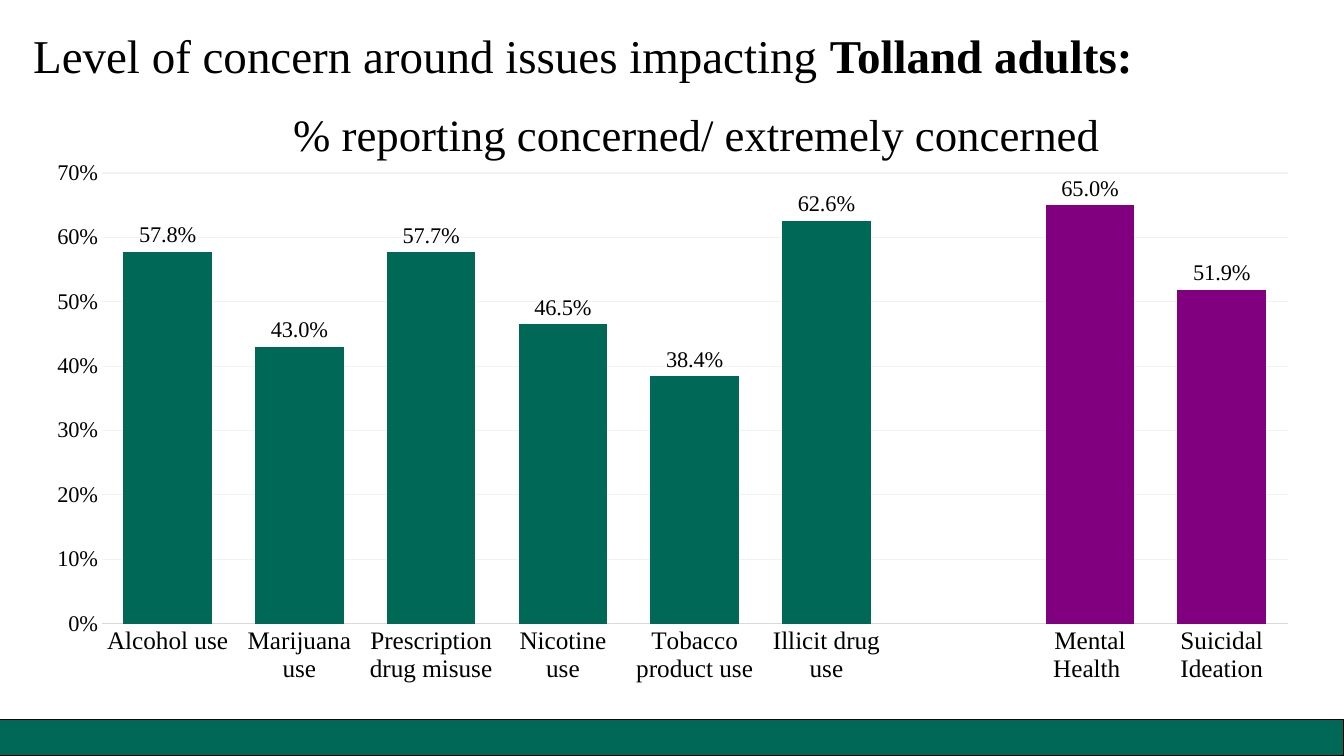
"""Build the slide on levels of concern among Tolland adults."""
from lxml.etree import SubElement
from pptx import Presentation
from pptx.chart.data import CategoryChartData as ChartData
from pptx.dml.color import RGBColor
from pptx.enum.chart import XL_CHART_TYPE as Kind, XL_LABEL_POSITION as Spot
from pptx.enum.chart import XL_TICK_MARK as Tick
from pptx.enum.shapes import MSO_SHAPE as Shape
from pptx.enum.text import MSO_ANCHOR as Anchor, MSO_AUTO_SIZE as Fit, PP_ALIGN as Align
from pptx.oxml.ns import qn
from pptx.util import Pt

GREEN = RGBColor(0x00, 0x68, 0x57)
PURPLE = RGBColor(0x80, 0x00, 0x80)
BLACK = RGBColor(0, 0, 0)
AXIS = RGBColor(0xD9, 0xD9, 0xD9)
GRID = RGBColor(0xF2, 0xF2, 0xF2)
FACE = "Times New Roman"

TITLE = [("Level of concern around issues impacting ", False), ("Tolland adults:", True)]
SUB = [("% reporting concerned/ extremely concerned", False)]
DATA = [
    ("Alcohol use", 0.578, GREEN),
    ("Marijuana use", 0.43, GREEN),
    ("Prescription drug misuse", 0.577, GREEN),
    ("Nicotine use", 0.465, GREEN),
    ("Tobacco product use", 0.384, GREEN),
    ("Illicit drug use", 0.626, GREEN),
    ("", None, GREEN),
    ("Mental Health ", 0.65, PURPLE),
    ("Suicidal Ideation", 0.519, PURPLE),
]
WIDE, HIGH = 960, 540
BAND = 26
PLOT = {"x": 0.055, "y": 0.042, "w": 0.925, "h": 0.83}


def put(item, vals):
    """Set each attribute of item from a dict."""
    for name, val in vals.items():
        setattr(item, name, val)


def style(font, size, bold=False):
    """Apply the slide's typeface to a font."""
    put(font, {"name": FACE, "size": Pt(size), "bold": bold})
    font.color.rgb = BLACK


def place(box, left, top, wide, high):
    """Move and size a shape in points."""
    put(box, {"left": Pt(left), "top": Pt(top), "width": Pt(wide), "height": Pt(high)})


def write(box, runs, size, space):
    """Fill a shape with one line of styled runs."""
    frame = box.text_frame
    put(frame, {"word_wrap": True, "auto_size": Fit.NONE, "vertical_anchor": Anchor.MIDDLE})
    para = frame.paragraphs[0]
    put(para, {"line_spacing": space, "space_before": Pt(0), "alignment": Align.LEFT})
    for text, bold in runs:
        run = para.add_run()
        run.text = text
        style(run.font, size, bold)


def rule(line, color):
    """Draw a thin line in a colour."""
    line.color.rgb = color
    line.width = Pt(0.75)


def fix_plot(chart):
    """Pin the inner plot area by fractions of the chart."""
    area = chart._chartSpace.chart.plotArea
    for old in area.findall(qn("c:layout")):
        area.remove(old)
    lay = SubElement(area, qn("c:layout"))
    area.insert(0, lay)
    man = SubElement(lay, qn("c:manualLayout"))
    tags = {"layoutTarget": "inner", "xMode": "edge", "yMode": "edge", **PLOT}
    for tag, val in tags.items():
        SubElement(man, qn("c:" + tag)).set("val", str(val))


def add_bars(slide):
    """Add the column chart of concern by issue."""
    data = ChartData(number_format="0.0%")
    data.categories = [name for name, _, _ in DATA]
    data.add_series("Series 1", [val for _, val, _ in DATA])
    spot = Pt(22.3), Pt(107.3), Pt(915.8), Pt(388)
    chart = slide.shapes.add_chart(Kind.COLUMN_CLUSTERED, *spot, data).chart
    put(chart, {"has_title": False, "has_legend": False})
    style(chart.font, 16)
    fix_plot(chart)

    cat, val = chart.category_axis, chart.value_axis
    for axis, size in ((cat, 18), (val, 16)):
        put(axis, {"major_tick_mark": Tick.NONE, "minor_tick_mark": Tick.NONE})
        style(axis.tick_labels.font, size)
    rule(cat.format.line, AXIS)
    put(val, {"minimum_scale": 0, "maximum_scale": 0.7, "major_unit": 0.1,
              "has_major_gridlines": True})
    val.format.line.fill.background()
    rule(val.major_gridlines.format.line, GRID)
    put(val.tick_labels, {"number_format": "0%", "number_format_is_linked": False})

    plot = chart.plots[0]
    put(plot, {"gap_width": 49, "vary_by_categories": False, "has_data_labels": True})
    tags = plot.data_labels
    put(tags, {"show_value": True, "number_format": "0.0%",
               "number_format_is_linked": False, "position": Spot.OUTSIDE_END})
    style(tags.font, 16)
    bars = plot.series[0]
    bars.format.fill.solid()
    bars.format.fill.fore_color.rgb = GREEN
    for i, (_, _, color) in enumerate(DATA):
        if color != GREEN:
            fill = bars.points[i].format.fill
            fill.solid()
            fill.fore_color.rgb = color


def main():
    """Make the deck and save it."""
    deck = Presentation()
    put(deck, {"slide_width": Pt(WIDE), "slide_height": Pt(HIGH)})
    slide = deck.slides.add_slide(deck.slide_layouts[5])
    band = slide.shapes.add_shape(
        Shape.RECTANGLE, Pt(-0.5), Pt(HIGH - BAND), Pt(WIDE), Pt(BAND))
    band.shadow.inherit = False
    band.fill.solid()
    band.fill.fore_color.rgb = GREEN
    band.line.color.rgb = BLACK
    band.line.width = Pt(1)

    title = slide.shapes.title
    place(title, 16.5, 22.3, 838, 44)
    write(title, TITLE, 33.6, 0.7)
    add_bars(slide)
    sub = slide.shapes.add_textbox(Pt(202.3), Pt(75.6), Pt(657.4), Pt(44))
    write(sub, SUB, 32, 0.9)
    deck.save("out.pptx")


if __name__ == "__main__":
    main()
